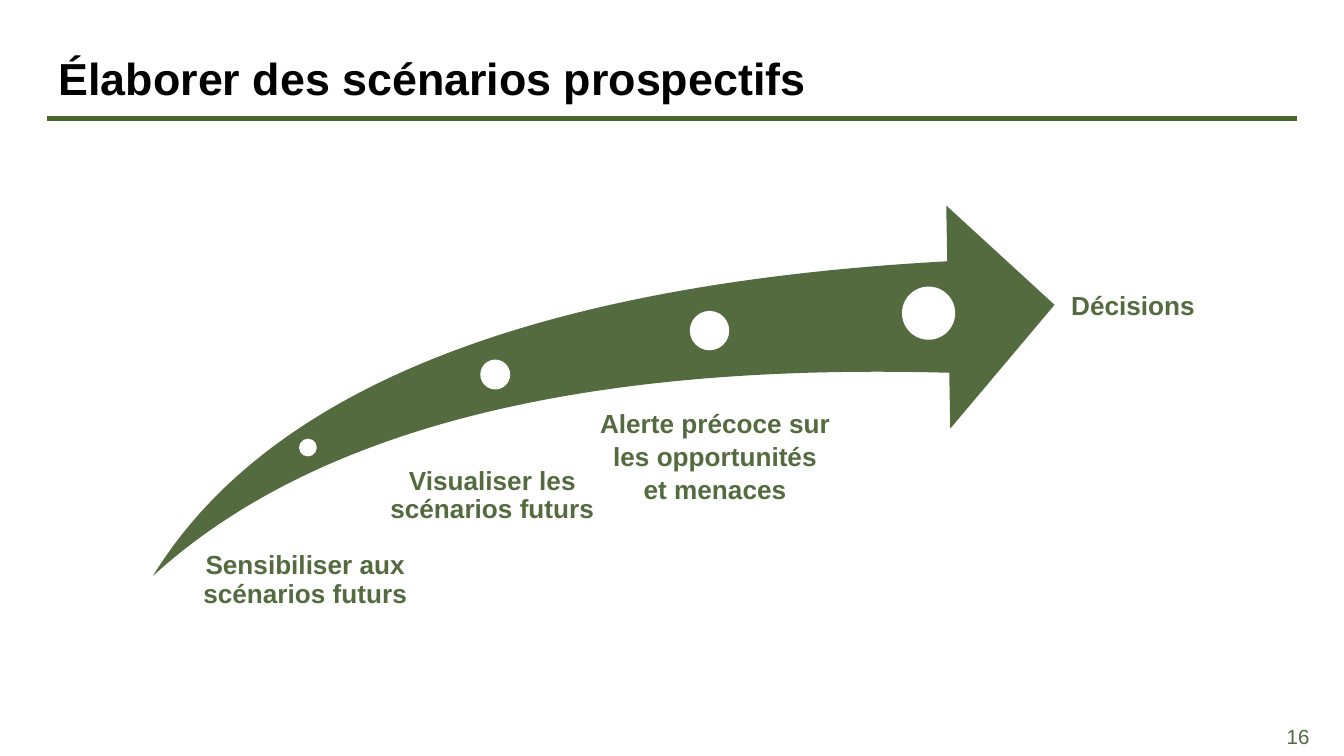
from dataclasses import dataclass

from lxml import etree
from pptx import Presentation
from pptx.dml.color import RGBColor
from pptx.enum.shapes import MSO_CONNECTOR, MSO_SHAPE
from pptx.enum.text import MSO_ANCHOR, PP_ALIGN
from pptx.oxml.ns import qn
from pptx.util import Cm, Pt

STRAIGHT = MSO_CONNECTOR.STRAIGHT
SWOOSH, ELLIPSE = MSO_SHAPE.SWOOSH_ARROW, MSO_SHAPE.OVAL
TOP, MIDDLE = MSO_ANCHOR.TOP, MSO_ANCHOR.MIDDLE
LEFT, CENTER = PP_ALIGN.LEFT, PP_ALIGN.CENTER


@dataclass(frozen=True)
class Theme:
    font: str = "Arial"
    ink: RGBColor = RGBColor(0x00, 0x00, 0x00)
    green: RGBColor = RGBColor(0x53, 0x6B, 0x3F)
    rule: RGBColor = RGBColor(0x4A, 0x66, 0x28)
    white: RGBColor = RGBColor(0xFF, 0xFF, 0xFF)
    title_size: int = 24
    label_size: int = 14
    number_size: int = 11


THEME = Theme()

# Content (lengths in cm)
TITLE = "Élaborer des scénarios prospectifs"
PAGE_NUMBER = "16"
ARROW_BOX = (3.25, 3.3, 16.48, 8.38)
ARROW_TILT = 5.4
# Each stage: paragraphs, label box, left inset, line spacing, dot centre, dot diameter
STAGES = [
    (["Sensibiliser aux scénarios futurs"],
     (3.28, 10.44, 4.75, 1.65), 0.23, 0.9, (5.82, 8.46), 0.3),
    (["Visualiser les scénarios futurs"],
     (6.93, 8.84, 4.34, 2.9), 0.41, 0.9, (9.36, 7.08), 0.53),
    (["Alerte précoce sur les opportunités", "et menaces"],
     (10.52, 7.67, 5.46, 3.28), 0.53, 1.05, (13.41, 6.25), 0.71),
    (["Décisions"],
     (18.9, 5.54, 4.32, 1.07), 0.71, 0.9, (17.55, 5.92), 0.97),
]


def lengths(values):
    return [Cm(value) for value in values]


def add_text(slide, paragraphs, box, size, color, bold=True, align=CENTER,
             anchor=TOP, spacing=1.0, insets=(0, 0, 0, 0)):
    frame = slide.shapes.add_textbox(*lengths(box)).text_frame
    frame.word_wrap = True
    frame.vertical_anchor = anchor
    (frame.margin_left, frame.margin_top,
     frame.margin_right, frame.margin_bottom) = lengths(insets)
    for index, wording in enumerate(paragraphs):
        paragraph = frame.add_paragraph() if index else frame.paragraphs[0]
        paragraph.alignment = align
        paragraph.line_spacing = spacing
        run = paragraph.add_run()
        run.text = wording
        run.font.name = THEME.font
        run.font.size = Pt(size)
        run.font.bold = bold
        run.font.color.rgb = color


def add_filled(slide, preset, box, color):
    shape = slide.shapes.add_shape(preset, *lengths(box))
    shape.shadow.inherit = False
    shape.fill.solid()
    shape.fill.fore_color.rgb = color
    shape.line.fill.background()
    return shape


def main():
    deck = Presentation()
    deck.slide_width, deck.slide_height = Cm(25.4), Cm(14.29)
    slide = deck.slides.add_slide(deck.slide_layouts[6])

    # Heading, rule and page number
    rule = slide.shapes.add_connector(STRAIGHT, *lengths((0.89, 2.24, 24.51, 2.24)))
    rule.line.color.rgb = THEME.rule
    rule.line.width = Pt(2.25)
    etree.SubElement(rule.element.spPr, qn("a:effectLst"))
    add_text(slide, [TITLE], (0.86, 0.74, 18.57, 1.6), THEME.title_size, THEME.ink,
             align=LEFT, anchor=MIDDLE, spacing=0.9, insets=(0.25,) * 4)
    add_text(slide, [PAGE_NUMBER], (23.67, 13.54, 1.73, 0.76), THEME.number_size,
             THEME.green, bold=False, anchor=MIDDLE)

    # Rising arrow
    arrow = add_filled(slide, SWOOSH, ARROW_BOX, THEME.green)
    arrow.rotation = ARROW_TILT
    arrow.adjustments[0] = arrow.adjustments[1] = 0.25

    # Stages along the arrow
    for wording, box, inset, spacing, (x, y), diameter in STAGES:
        corner = (x - diameter / 2, y - diameter / 2)
        dot = add_filled(slide, ELLIPSE, (*corner, diameter, diameter), THEME.white)
        dot.line.color.rgb = THEME.white
        dot.line.width = Pt(1)
        add_text(slide, wording, box, THEME.label_size, THEME.green,
                 spacing=spacing, insets=(inset, 0, 0, 0))

    deck.save("out.pptx")


if __name__ == "__main__":
    main()
